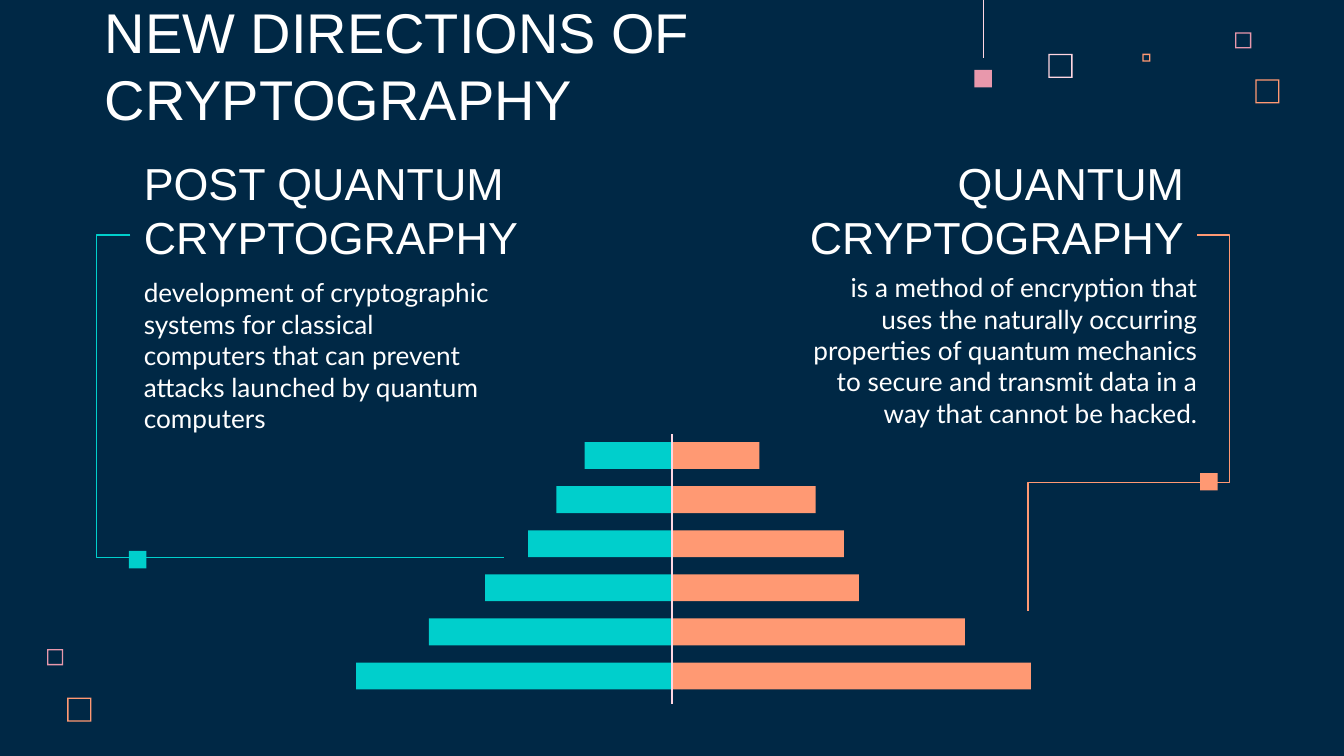
"""Builds a slide comparing two directions of cryptography."""
from lxml.etree import SubElement
from pptx import Presentation
from pptx.dml.color import RGBColor as Rgb
from pptx.enum.shapes import MSO_CONNECTOR as Conn, MSO_SHAPE as Geo
from pptx.enum.text import MSO_ANCHOR as Anchor, MSO_AUTO_SIZE as Auto, PP_ALIGN as Align
from pptx.oxml.ns import qn
from pptx.util import Inches, Pt

HUES = {"navy": "002845", "white": "FFFFFF", "teal": "00CFCC",
        "coral": "FF9973", "rose": "E898AC", "blush": "FFD6E1"}


class Deck:
    def __init__(self):
        self.prs = Presentation()
        self.prs.slide_width, self.prs.slide_height = Inches(10), Inches(10 * 9 / 16)
        self.slide = self.prs.slides.add_slide(self.prs.slide_layouts[4])
        self.paint(self.slide.background.fill, "navy")

    def paint(self, fill, hue):
        fill.solid()
        fill.fore_color.rgb = Rgb.from_string(HUES[hue])

    def text(self, idx, box, words, size, font="Arial", side=Align.LEFT):
        hold = self.slide.placeholders[idx]
        hold.left, hold.top, hold.width, hold.height = map(Inches, box)
        frame = hold.text_frame
        frame.text = words
        frame.word_wrap, frame.auto_size = True, Auto.NONE
        frame.vertical_anchor = Anchor.BOTTOM if font == "Arial" else Anchor.TOP
        frame.margin_left = frame.margin_right = Inches(0.1)
        frame.margin_top = frame.margin_bottom = Inches(0.1)
        para = frame.paragraphs[0]
        para.alignment, para.space_before, para.line_spacing = side, Pt(0), 1.0
        props = para._p.get_or_add_pPr()
        props.set("marL", "0")
        props.set("indent", "0")
        SubElement(props, qn("a:buNone"))
        style = para.runs[0].font
        style.name, style.size, style.bold = font, Pt(size), False
        style.color.rgb = Rgb.from_string(HUES["white"])

    def block(self, x, y, wide, high, hue, geo=Geo.RECTANGLE):
        shape = self.slide.shapes.add_shape(geo, *map(Inches, (x, y, wide, high)))
        shape.shadow.inherit = False
        shape.line.fill.background()
        self.paint(shape.fill, hue)
        return shape

    def frame(self, x, y, side, hue):
        shape = self.block(x, y, side, side, hue, Geo.FRAME)
        shape.adjustments[0] = 0.01 / side

    def line(self, start, end, hue, width=0.75, bends=()):
        kind = Conn.ELBOW if bends else Conn.STRAIGHT
        link = self.slide.shapes.add_connector(kind, *map(Inches, start + end))
        link.line.width = Pt(width)
        link.line.color.rgb = Rgb.from_string(HUES[hue])
        props = link._element.spPr
        SubElement(props, qn("a:effectLst"))
        if bends:
            geom = props.find(qn("a:prstGeom"))
            geom.set("prst", f"bentConnector{len(bends) + 2}")
            guides = geom.find(qn("a:avLst"))
            for num, bend in enumerate(bends, 1):
                SubElement(guides, qn("a:gd"), name=f"adj{num}",
                           fmla=f"val {round(bend * 100000)}")


def main():
    deck = Deck()

    deck.text(0, (0.68, 0.45, 6.73, 0.63), "NEW DIRECTIONS OF CRYPTOGRAPHY", 30)
    deck.text(1, (0.97, 1.43, 4.19, 0.63), "POST QUANTUM CRYPTOGRAPHY", 24)
    deck.text(2, (0.97, 1.96, 2.87, 1.22),
              "development of cryptographic systems for classical computers that "
              "can prevent attacks launched by quantum computers", 14, "Lato")
    deck.text(3, (5.65, 1.43, 3.26, 0.63), "QUANTUM CRYPTOGRAPHY", 24, side=Align.RIGHT)
    deck.text(4, (5.91, 1.92, 3.1, 1.12),
              "is a method of encryption that uses the naturally occurring "
              "properties of quantum mechanics to secure and transmit data in a "
              "way that cannot be hacked.", 14, "Lato", Align.RIGHT)

    for x, y, side, hue in [(7.8, 0.4, 0.18, "blush"), (9.19, 0.24, 0.12, "rose"),
                            (8.5, 0.4, 0.06, "coral"), (9.34, 0.59, 0.18, "coral"),
                            (0.35, 4.83, 0.12, "rose"), (0.5, 5.19, 0.18, "coral")]:
        deck.frame(x, y, side, hue)
    deck.line((7.32, 0), (7.32, 0.43), "blush", 0.5)

    mid, top, last, high = 5, 3.29, 4.93, 0.2
    left = [0.65, 0.86, 1.07, 1.39, 1.81, 2.35]
    right = [0.65, 1.07, 1.28, 1.39, 2.18, 2.67]
    step = (last - top) / (len(left) - 1)
    for row, (west, east) in enumerate(zip(left, right)):
        y = top + row * step
        deck.block(mid - west, y, west, high, "teal")
        deck.block(mid, y, east, high, "coral")
    deck.line((mid, 3.23), (mid, 5.24), "blush")

    deck.line((0.97, 1.75), (3.75, 4.15), "teal", bends=(-0.25 / 2.78,))
    deck.line((8.91, 1.75), (7.65, 4.55), "coral", bends=(-0.24 / 1.26, 1.84 / 2.8))
    for x, y, hue in [(7.25, 0.52, "rose"), (0.96, 4.1, "teal"), (8.93, 3.52, "coral")]:
        deck.block(x, y, 0.13, 0.13, hue)

    deck.prs.save("out.pptx")


if __name__ == "__main__":
    main()
